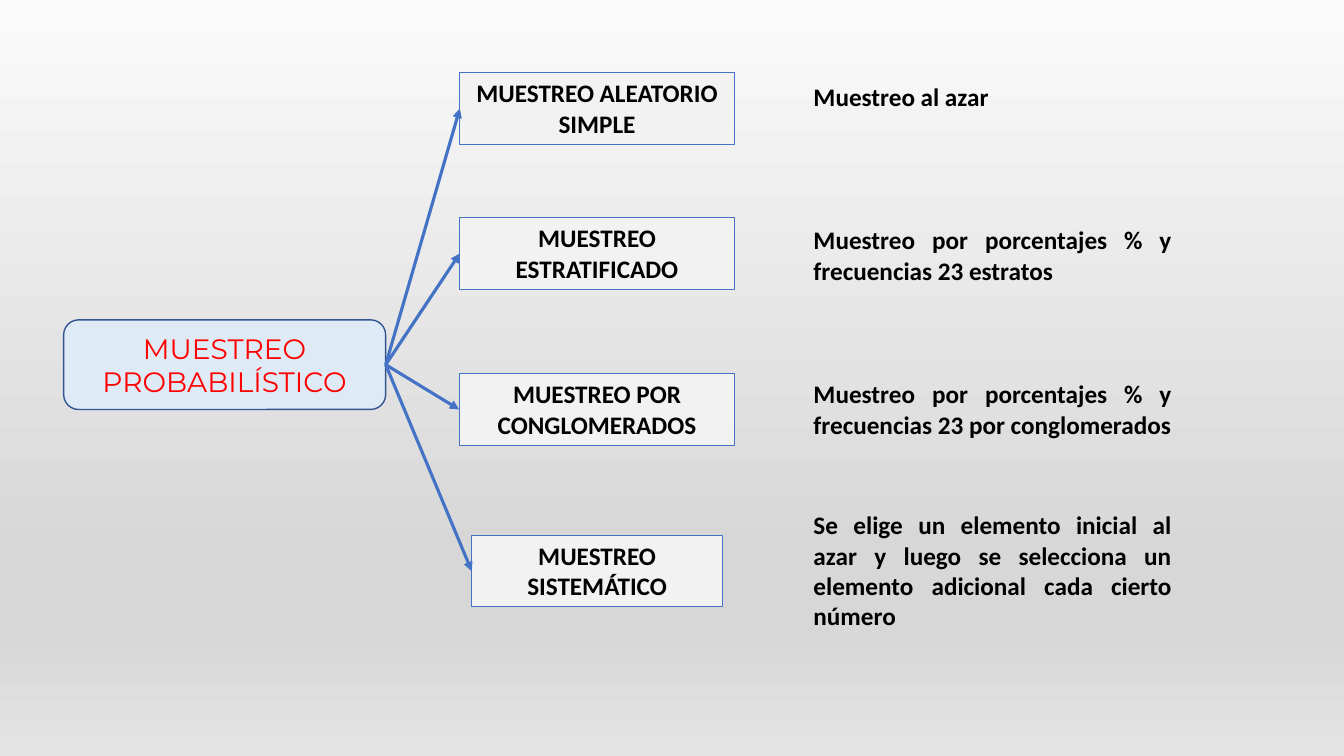
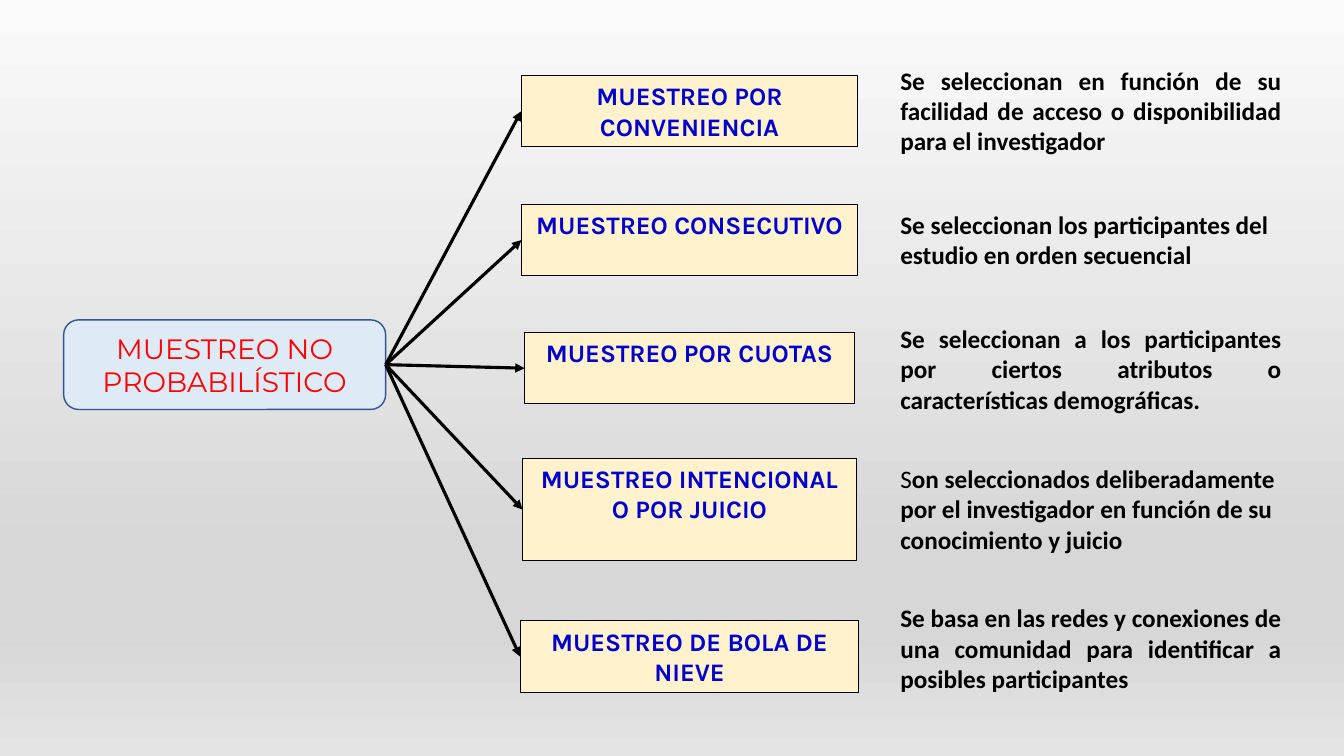
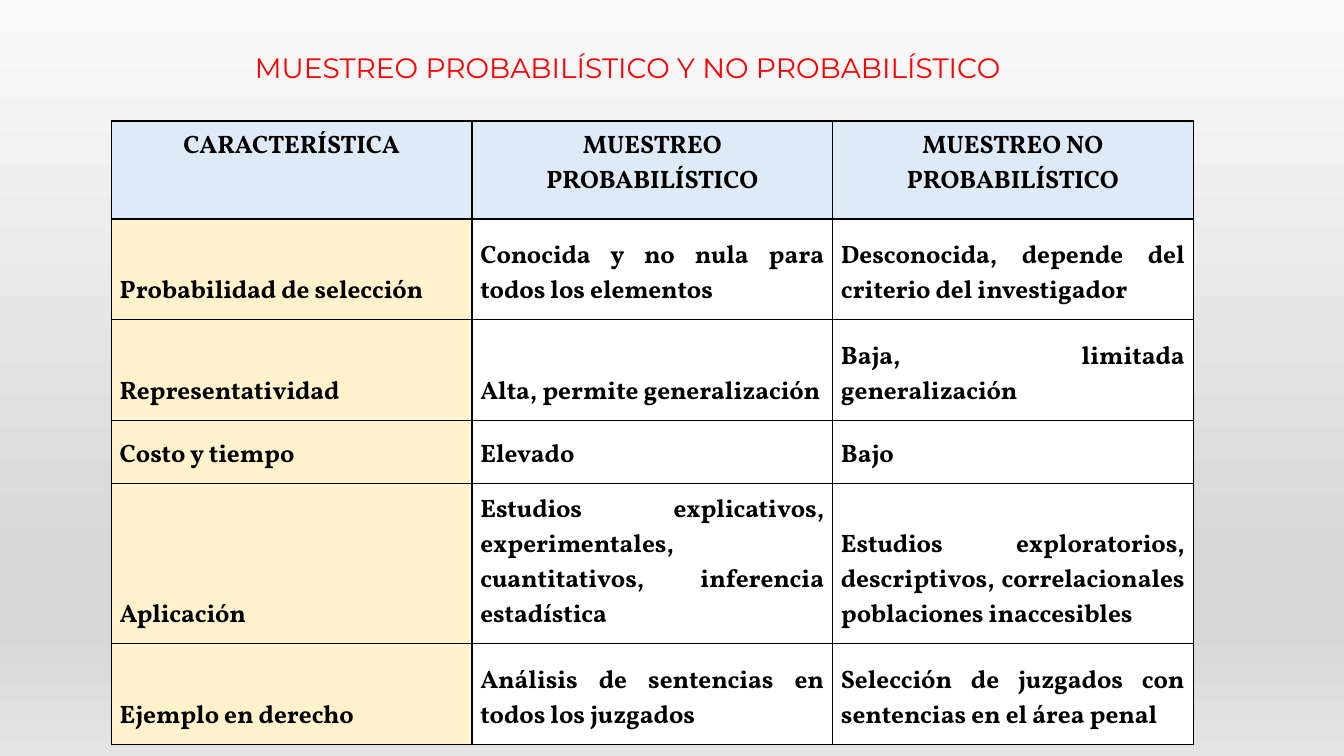
from dataclasses import dataclass

from lxml import etree
from pptx import Presentation
from pptx.dml.color import RGBColor
from pptx.enum.shapes import MSO_CONNECTOR, MSO_SHAPE
from pptx.enum.text import MSO_ANCHOR, PP_ALIGN
from pptx.oxml.ns import qn
from pptx.util import Pt

LEFT, MID, JUST = PP_ALIGN.LEFT, PP_ALIGN.CENTER, PP_ALIGN.JUSTIFY
TOP, CENTER, BOTTOM = MSO_ANCHOR.TOP, MSO_ANCHOR.MIDDLE, MSO_ANCHOR.BOTTOM
RECT, ROUND = MSO_SHAPE.RECTANGLE, MSO_SHAPE.ROUNDED_RECTANGLE
STRAIGHT = MSO_CONNECTOR.STRAIGHT


@dataclass(frozen=True)
class Theme:
    black: str = "000000"
    white: str = "FFFFFF"
    gray: str = "F2F2F2"
    blue: str = "4472C4"
    navy: str = "325491"
    ink: str = "0000CC"
    red: str = "FF0000"
    sky: str = "DEEBF7"
    cream: str = "FFF2CC"
    back: tuple = ((0, "FAFAFA"), (74, "D7D7D7"), (83, "D7D7D7"), (100, "E4E4E4"))
    head: int = 20
    body: int = 18


T = Theme()

# Text styles: font attributes and colour
TITLE = ({"name": "Montserrat", "size": Pt(T.head), "bold": False}, T.red)
NOTE = ({"name": "Calibri", "size": Pt(T.body), "bold": True}, T.black)
LIGHT = ({**NOTE[0], "bold": False}, T.black)
LABEL = ({"name": "Karla", "size": Pt(T.body), "bold": True}, T.ink)
CELL = ({"name": "Vollkorn", "size": Pt(T.body), "bold": True}, T.black)

# Content of the two trees
# boxes: top, width, height, text; notes: top, height, align, runs
TREES = [
    {
        "hub": "MUESTREO PROBABILÍSTICO",
        "fill": T.gray, "edge": T.blue, "arrow": T.blue, "style": NOTE,
        "axis": 426.5, "left": 574, "width": 270,
        "boxes": [
            (52, 196, 51, "MUESTREO ALEATORIO SIMPLE"),
            (155.5, 196, 51, "MUESTREO ESTRATIFICADO"),
            (267, 197, 51, "MUESTREO POR CONGLOMERADOS"),
            (382.5, 179, 51, "MUESTREO SISTEMÁTICO"),
        ],
        "notes": [
            (54.5, 29, LEFT, [("Muestreo al azar", NOTE)]),
            (157, 51, JUST, [("Muestreo por porcentajes % y frecuencias 23 estratos", NOTE)]),
            (267, 73, JUST, [("Muestreo por porcentajes % y frecuencias 23 por "
                              "conglomerados", NOTE)]),
            (360.5, 94, JUST, [("Se elige un elemento inicial al azar y luego se selecciona "
                                "un elemento adicional cada cierto número", NOTE)]),
        ],
    },
    {
        "hub": "MUESTREO NO PROBABILÍSTICO",
        "fill": T.cream, "edge": T.black, "arrow": T.black, "style": LABEL,
        "axis": 492.5, "left": 636, "width": 286.5,
        "boxes": [
            (54, 240.5, 51, "MUESTREO POR CONVENIENCIA"),
            (146, 240, 51, "MUESTREO CONSECUTIVO"),
            (237.5, 235.5, 51, "MUESTREO POR CUOTAS"),
            (327.5, 238.5, 73, "MUESTREO INTENCIONAL O POR JUICIO"),
            (443.5, 242, 51, "MUESTREO DE BOLA DE NIEVE"),
        ],
        "notes": [
            (43, 73, JUST, [("Se seleccionan en función de su facilidad de acceso o "
                             "disponibilidad para el investigador", NOTE)]),
            (146, 51, LEFT, [("Se seleccionan los participantes del estudio en orden "
                              "secuencial", NOTE)]),
            (227.5, 73, JUST, [("Se seleccionan a los participantes por ciertos atributos o "
                                "características demográficas.", NOTE)]),
            (327.5, 73, LEFT, [("S", LIGHT),
                               ("on seleccionados deliberadamente por el investigador en "
                                "función de su conocimiento y juicio", NOTE)]),
            (427, 73, JUST, [("Se basa en las redes y conexiones de una comunidad para "
                              "identificar a posibles participantes", NOTE)]),
        ],
    },
]
HUB = (45.5, 228.5, 230, 64)

# Content of the table slide
HEADING = "MUESTREO PROBABILÍSTICO Y NO PROBABILÍSTICO"
ROWS = [
    (70, "CARACTERÍSTICA", "MUESTREO PROBABILÍSTICO", "MUESTREO NO PROBABILÍSTICO"),
    (72, "Probabilidad de selección", "Conocida y no nula para todos los elementos",
     "Desconocida, depende del criterio del investigador"),
    (72, "Representatividad", "Alta, permite generalización",
     "Baja, limitada generalización"),
    (45, "Costo y tiempo", "Elevado", "Bajo"),
    (114, "Aplicación",
     "Estudios explicativos, experimentales, cuantitativos, inferencia estadística",
     "Estudios exploratorios, descriptivos, correlacionales poblaciones inaccesibles"),
    (72, "Ejemplo en derecho", "Análisis de sentencias en todos los juzgados",
     "Selección de juzgados con sentencias en el área penal"),
]
COL = 257.6


def rgb(code):
    return RGBColor.from_string(code)


def points(box):
    return [Pt(n) for n in box]


def child(parent, tag, **attrs):
    return etree.SubElement(parent, qn(tag), attrs)


def write(frame, runs, align, anchor=TOP):
    """Fill a text frame with one paragraph of styled runs."""
    frame.word_wrap = True
    frame.vertical_anchor = anchor
    para = frame.paragraphs[0]
    para.alignment = align
    for text, (font, color) in runs:
        run = para.add_run()
        run.text = text
        for key, value in font.items():
            setattr(run.font, key, value)
        run.font.color.rgb = rgb(color)
    return para


def block(slide, kind, box, fill, edge, weight):
    shape = slide.shapes.add_shape(kind, *points(box))
    shape.shadow.inherit = False
    shape.fill.solid()
    shape.fill.fore_color.rgb = rgb(fill)
    shape.line.color.rgb = rgb(edge)
    shape.line.width = Pt(weight)
    return shape


def arrow(slide, hub, box, color):
    """Glue an arrow from the hub's right side to the box's left side."""
    link = slide.shapes.add_connector(STRAIGHT, 0, 0, 0, 0)
    link.begin_connect(hub, 3)
    link.end_connect(box, 1)
    link.line.color.rgb = rgb(color)
    link.line.width = Pt(2.25)
    child(link.line._get_or_add_ln(), "a:tailEnd", type="triangle")
    child(link.element.spPr, "a:effectLst")


def paint(master):
    """Set the shared gradient background."""
    fill = master.background.fill
    fill.gradient()
    fill.gradient_angle = 270
    stops = master.element.find(".//" + qn("a:gsLst"))
    for old in list(stops):
        stops.remove(old)
    for place, color in T.back:
        stop = child(stops, "a:gs", pos=str(place * 1000))
        child(stop, "a:srgbClr", val=color)


def tree(slide, data):
    hub = block(slide, ROUND, HUB, T.sky, T.navy, 1)
    write(hub.text_frame, [(data["hub"], TITLE)], MID, CENTER)
    boxes = []
    for top, width, height, text in data["boxes"]:
        spot = (data["axis"] - width / 2, top, width, height)
        box = block(slide, RECT, spot, data["fill"], data["edge"], 0.75)
        write(box.text_frame, [(text, data["style"])], MID)
        boxes.append(box)
    for top, height, align, runs in data["notes"]:
        spot = (data["left"], top, data["width"], height)
        note = slide.shapes.add_textbox(*points(spot))
        write(note.text_frame, runs, align)
    for box in boxes:
        arrow(slide, hub, box, data["arrow"])


def border(cell):
    props = cell._tc.get_or_add_tcPr()
    for side in ("a:lnL", "a:lnR", "a:lnT", "a:lnB"):
        line = child(props, side, w=str(Pt(1)))
        child(child(line, "a:solidFill"), "a:srgbClr", val=T.black)


def grid(slide):
    heights = [row[0] for row in ROWS]
    spot = (79.5, 86.4, COL * 3, sum(heights))
    table = slide.shapes.add_table(len(ROWS), 3, *points(spot)).table
    table.first_row = table.horz_banding = False
    for col in table.columns:
        col.width = Pt(COL)
    for r, (height, *texts) in enumerate(ROWS):
        table.rows[r].height = Pt(height)
        for c, text in enumerate(texts):
            cell = table.cell(r, c)
            border(cell)
            color = T.sky if r == 0 else T.cream if c == 0 else T.white
            cell.fill.solid()
            cell.fill.fore_color.rgb = rgb(color)
            cell.margin_left = cell.margin_right = Pt(6)
            cell.margin_top = cell.margin_bottom = Pt(7 if r else 6)
            align = MID if r == 0 else LEFT if c == 0 else JUST
            write(cell.text_frame, [(text, CELL)], align)
            cell.vertical_anchor = BOTTOM if r else TOP


def main():
    prs = Presentation()
    prs.slide_width, prs.slide_height = Pt(960), Pt(540)
    paint(prs.slide_master)
    blank = prs.slide_layouts[6]

    # Trees
    for data in TREES:
        tree(prs.slides.add_slide(blank), data)

    # Comparison table
    slide = prs.slides.add_slide(blank)
    grid(slide)
    title = slide.shapes.add_textbox(*points((175, 31, 601, 32)))
    para = write(title.text_frame, [(HEADING, TITLE)], LEFT)
    para.line_spacing = 1.07
    para.space_after = Pt(8)

    prs.save("out.pptx")


if __name__ == "__main__":
    main()
